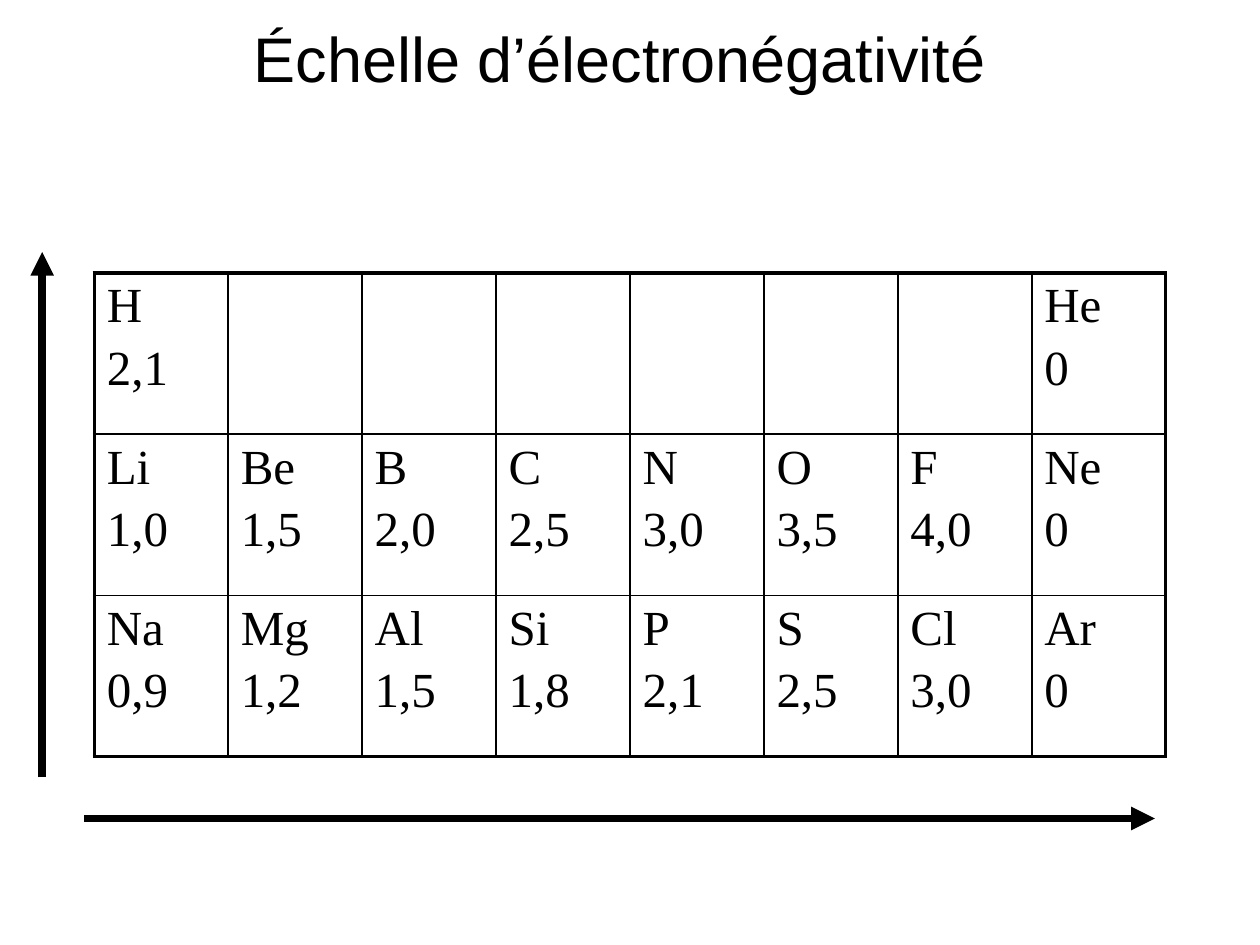
from dataclasses import dataclass
from lxml.etree import SubElement
from pptx import Presentation
from pptx.dml.color import RGBColor as RGB
from pptx.enum.shapes import MSO_CONNECTOR as LINK
from pptx.enum.text import MSO_ANCHOR as ANCHOR, PP_ALIGN as ALIGN
from pptx.oxml.ns import qn
from pptx.util import Cm, Pt


@dataclass(frozen=True)
class Theme:
    ink: str = "000000"
    head: str = "Arial"
    body: str = "Times New Roman"
    big: float = 36
    mid: float = 28
    gap: float = 4.7
    thin: float = 1
    thick: float = 2.25
    arrow: float = 4.5


theme = Theme()


def write(para, text, font, size):
    run = para.add_run()
    run.text = text
    run.font.name = font
    run.font.size = Pt(size)
    run.font.color.rgb = RGB.from_string(theme.ink)


def edge(cell, side, width):
    props = cell._tc.get_or_add_tcPr()
    line = SubElement(props, qn("a:ln" + side), w=str(Pt(width)))
    fill = SubElement(line, qn("a:solidFill"))
    SubElement(fill, qn("a:srgbClr"), val=theme.ink)


deck = Presentation()
deck.slide_width, deck.slide_height = Cm(25.4), Cm(19.05)
slide = deck.slides.add_slide(deck.slide_layouts[6])

title = slide.shapes.add_textbox(Cm(1.27), Cm(-0.43), Cm(22.45), Cm(3.18))
frame = title.text_frame
frame.word_wrap = True
frame.vertical_anchor = ANCHOR.MIDDLE
frame.paragraphs[0].alignment = ALIGN.CENTER
write(frame.paragraphs[0], "Échelle d’électronégativité", theme.head, theme.big)

rows = [
    ["H 2,1", "", "", "", "", "", "", "He 0"],
    ["Li 1,0", "Be 1,5", "B 2,0", "C 2,5", "N 3,0", "O 3,5", "F 4,0", "Ne 0"],
    ["Na 0,9", "Mg 1,2", "Al 1,5", "Si 1,8", "P 2,1", "S 2,5", "Cl 3,0", "Ar 0"],
]
high, wide = len(rows), len(rows[0])
table = slide.shapes.add_table(
    high, wide, Cm(1.9), Cm(5.5), Cm(2.7 * wide), Cm(3.25 * high)
).table
table.first_row = table.horz_banding = False
for col in table.columns:
    col.width = Cm(2.7)
for row in table.rows:
    row.height = Cm(3.25)

for y, row in enumerate(rows):
    for x, entry in enumerate(row):
        cell = table.cell(y, x)
        outer = {"L": x == 0, "R": x == wide - 1, "T": y == 0, "B": y == high - 1}
        for side, bold in outer.items():
            edge(cell, side, theme.thick if bold else theme.thin)
        cell.fill.background()
        for n, word in enumerate(entry.split()):
            frame = cell.text_frame
            para = frame.add_paragraph() if n else frame.paragraphs[0]
            para.space_before = Pt(theme.gap * n)
            write(para, word, theme.body, theme.mid)

for x1, y1, x2, y2 in [(0.85, 15.67, 0.85, 5.08), (1.7, 16.5, 23.28, 16.5)]:
    arrow = slide.shapes.add_connector(LINK.STRAIGHT, Cm(x1), Cm(y1), Cm(x2), Cm(y2))
    arrow.line.color.rgb = RGB.from_string(theme.ink)
    arrow.line.width = Pt(theme.arrow)
    SubElement(arrow.line._get_or_add_ln(), qn("a:tailEnd"), type="triangle")
    SubElement(arrow._element.spPr, qn("a:effectLst"))

deck.save("out.pptx")
